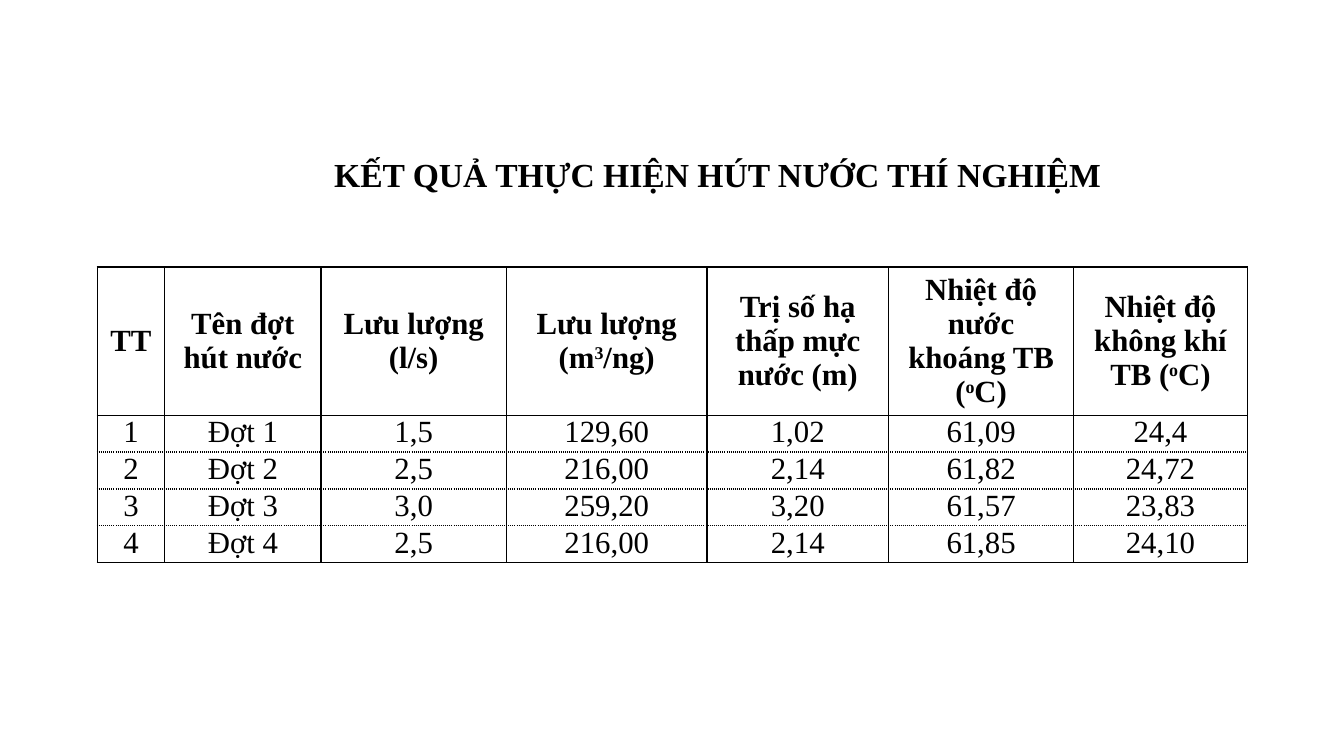
from lxml import etree
from pptx import Presentation
from pptx.dml.color import RGBColor
from pptx.enum.text import MSO_ANCHOR, MSO_AUTO_SIZE, PP_ALIGN
from pptx.oxml.ns import qn
from pptx.util import Cm, Pt

CENTER = PP_ALIGN.CENTER
MIDDLE, TOP = MSO_ANCHOR.MIDDLE, MSO_ANCHOR.TOP
FIT = MSO_AUTO_SIZE.SHAPE_TO_FIT_TEXT
FONT = "Times New Roman"
COLORS = {"ink": "000000", "paper": "FFFFFF"}

# Text between carets is raised
HEADS = ["TT", "Tên đợt hút nước", "Lưu lượng (l/s)", "Lưu lượng (m^3^/ng)",
         "Trị số hạ thấp mực nước (m)", "Nhiệt độ nước khoáng TB (^o^C)",
         "Nhiệt độ không khí TB (^o^C)"]
TESTS = [
    ["1", "Đợt 1", "1,5", "129,60", "1,02", "61,09", "24,4"],
    ["2", "Đợt 2", "2,5", "216,00", "2,14", "61,82", "24,72"],
    ["3", "Đợt 3", "3,0", "259,20", "3,20", "61,57", "23,83"],
    ["4", "Đợt 4", "2,5", "216,00", "2,14", "61,85", "24,10"],
]
WIDTHS = [1.7, 3.94, 4.67, 5.06, 4.57, 4.67, 4.37]
HEAD_H, ROW_H = 3.73, 0.93


def style(para, size, bold):
    para.alignment = CENTER
    for run in para.runs:
        font = run.font
        font.name, font.size, font.bold = FONT, Pt(size), bold
        font.color.rgb = RGBColor.from_string(COLORS["ink"])


def write(para, text):
    """Fill a paragraph, raising every second part."""
    parts = text.split("^")
    para.text = parts[0]
    for i, part in enumerate(parts[1:], 1):
        run = para.add_run()
        run.text = part
        if i % 2:
            run._r.get_or_add_rPr().set("baseline", "30000")


def border(cell, dashes):
    """Draw the four edges; dashes maps a side to its dash."""
    props = cell._tc.get_or_add_tcPr()
    for i, side in enumerate("LRTB"):
        line = etree.Element(qn("a:ln" + side), w=str(Pt(1)))
        fill = etree.SubElement(line, qn("a:solidFill"))
        etree.SubElement(fill, qn("a:srgbClr"), val=COLORS["ink"])
        etree.SubElement(line, qn("a:prstDash"), val=dashes.get(side, "solid"))
        props.insert(i, line)


def add_title(slide, text):
    box = slide.shapes.add_textbox(Cm(7.14), Cm(3.76), Cm(21.89), Cm(1.27))
    frame = box.text_frame
    frame.word_wrap = True
    frame.auto_size = FIT
    frame.text = text
    para = frame.paragraphs[0]
    para.space_before = para.space_after = Pt(6)
    style(para, 24, True)


def fill_cell(cell, text, head, dashes):
    cell.margin_left = cell.margin_right = Cm(0.18)
    cell.margin_top = cell.margin_bottom = 0
    cell.vertical_anchor = MIDDLE if head else TOP
    cell.fill.solid()
    cell.fill.fore_color.rgb = RGBColor.from_string(COLORS["paper"])
    para = cell.text_frame.paragraphs[0]
    write(para, text)
    style(para, 22, head)
    if head:
        para.space_after = Pt(6)
    border(cell, dashes)


def add_grid(slide, rows):
    last = len(rows) - 1
    frame = slide.shapes.add_table(
        len(rows), len(WIDTHS), Cm(2.45), Cm(6.73),
        Cm(sum(WIDTHS)), Cm(HEAD_H + last * ROW_H))
    table = frame.table
    table.first_row = table.horz_banding = False
    for col, width in zip(table.columns, WIDTHS):
        col.width = Cm(width)
    for r, row in enumerate(rows):
        table.rows[r].height = Cm(ROW_H if r else HEAD_H)
        # Dotted lines only between test rows
        dashes = {}
        if r > 1:
            dashes["T"] = "sysDot"
        if 0 < r < last:
            dashes["B"] = "sysDot"
        for c, text in enumerate(row):
            fill_cell(table.cell(r, c), text, r == 0, dashes)


def main():
    deck = Presentation()
    deck.slide_width, deck.slide_height = Cm(33.87), Cm(19.05)
    slide = deck.slides.add_slide(deck.slide_layouts[6])
    add_grid(slide, [HEADS] + TESTS)
    add_title(slide, "KẾT QUẢ THỰC HIỆN HÚT NƯỚC THÍ NGHIỆM")
    deck.save("out.pptx")


if __name__ == "__main__":
    main()
